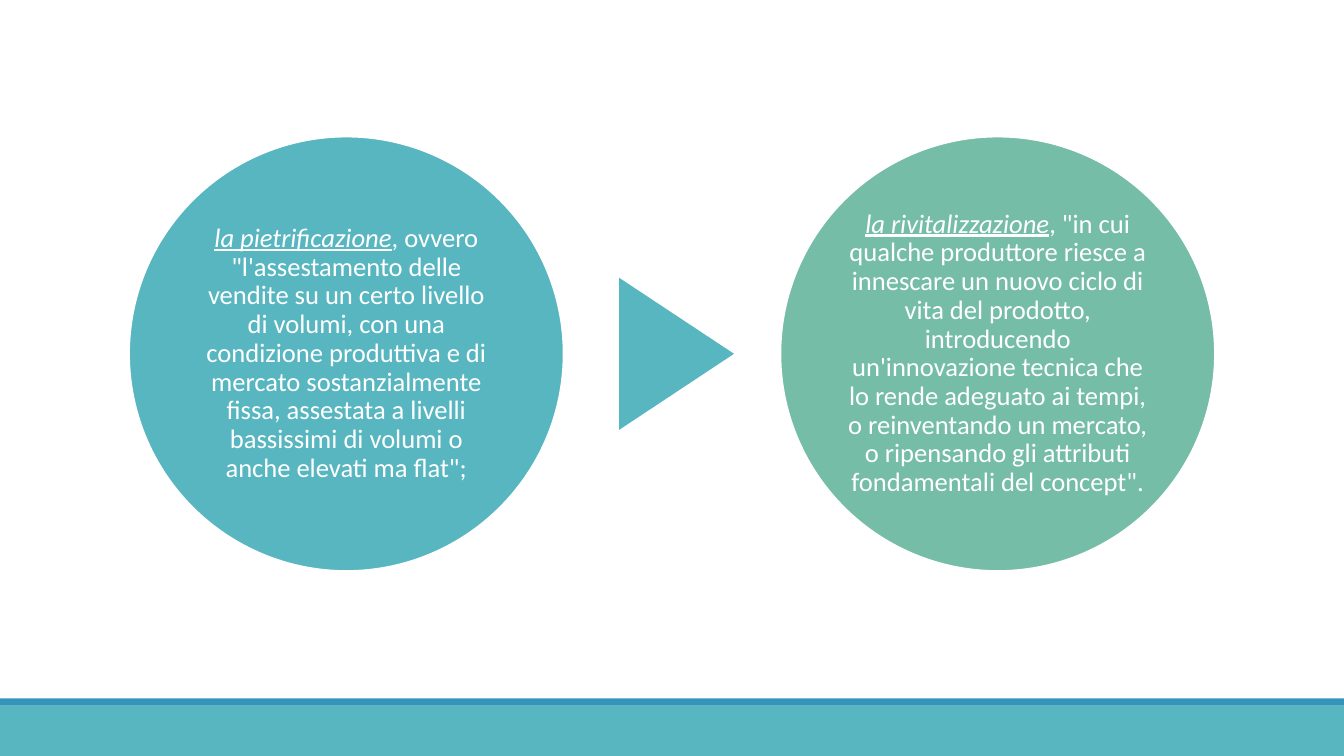
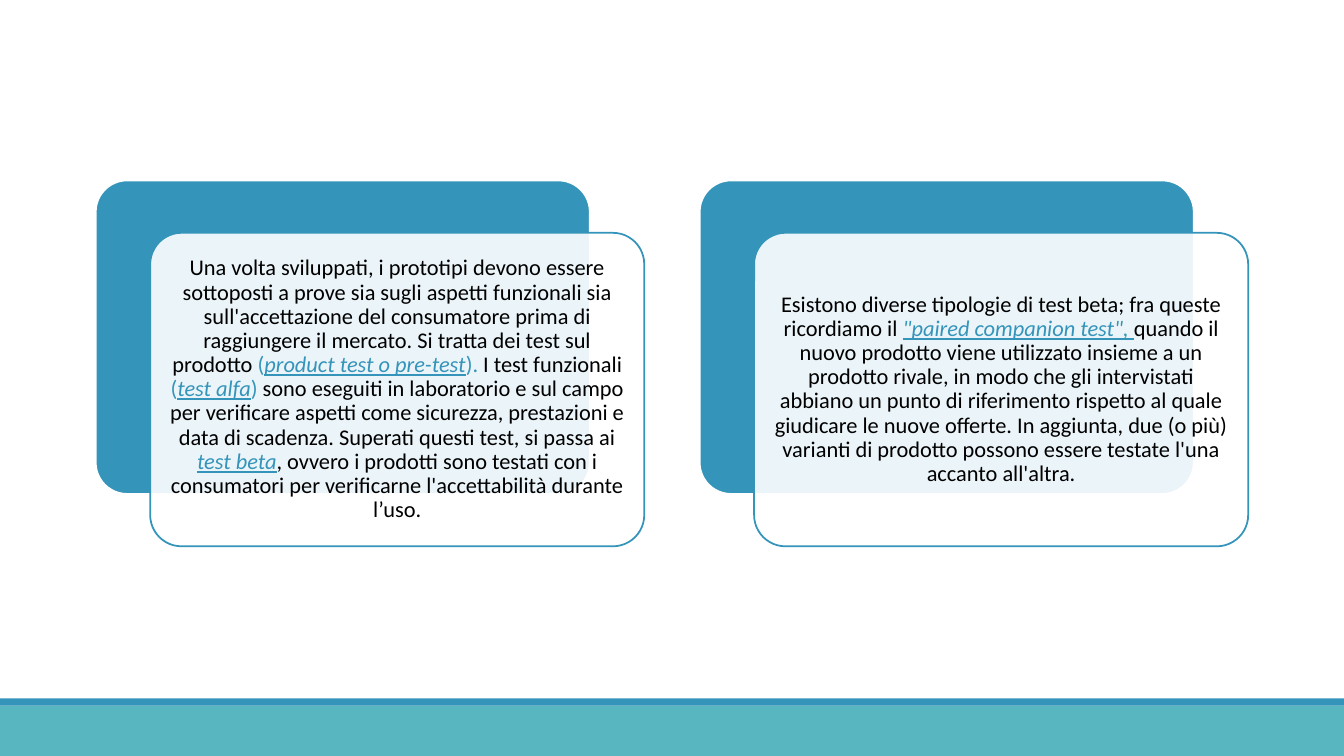
from dataclasses import dataclass

from lxml import etree
from pptx import Presentation
from pptx import util as u
from pptx.dml.color import RGBColor
from pptx.enum import shapes, text
from pptx.oxml import ns


@dataclass(frozen=True)
class Theme:
    teal: str = "58B6C0"
    blue: str = "3494BA"
    green: str = "75BDA7"
    white: str = "FFFFFF"
    black: str = "000000"
    font: str = "Calibri"
    circle_size: float = 19
    card_size: float = 16
    outline: float = 1.25


THEME = Theme()
WIDTH, HEIGHT = 13.33, 7.5
BLANK_LAYOUT = 6
CONTENT_MIDDLE = 3.51

CIRCLE = 4.31
CIRCLE_MARGIN = 1.28
ARROW_CENTER = 6.71
ARROW_BASE, ARROW_DEPTH = 1.51, 1.14

CARD_WIDTH, CARD_HEIGHT = 4.9, 3.11
CARD_LEFT, CARD_TOP, CARD_STEP = 0.95, 1.79, 5.99
CARD_SHIFT_X, CARD_SHIFT_Y = 0.54, 0.52

PLAIN = {"color": THEME.white}
TERM = {"color": THEME.white, "italic": True, "underline": True}
BODY = {"color": THEME.black}
ACCENT = {"color": THEME.blue}
KEYWORD = {"color": THEME.blue, "italic": True, "underline": True}

CIRCLES = [
    (THEME.teal, [
        ("la pietrificazione", TERM),
        (", ovvero \"l'assestamento delle vendite su un certo livello di volumi, "
         "con una condizione produttiva e di mercato sostanzialmente fissa, "
         "assestata a livelli bassissimi di volumi o anche elevati ma flat\";", PLAIN),
    ]),
    (THEME.green, [
        ("la rivitalizzazione", TERM),
        (", \"in cui qualche produttore riesce a innescare un nuovo ciclo di vita "
         "del prodotto, introducendo un'innovazione tecnica che lo rende adeguato "
         "ai tempi, o reinventando un mercato, o ripensando gli attributi "
         "fondamentali del concept\".", PLAIN),
    ]),
]

CARDS = [
    [
        ("Una volta sviluppati, i prototipi devono essere sottoposti a prove sia "
         "sugli aspetti funzionali sia sull'accettazione del consumatore prima di "
         "raggiungere il mercato. Si tratta dei test sul prodotto ", BODY),
        ("(", ACCENT),
        ("product test o pre-test", KEYWORD),
        (").", ACCENT),
        (" I test funzionali ", BODY),
        ("(", ACCENT),
        ("test alfa", KEYWORD),
        (") ", ACCENT),
        ("sono eseguiti in laboratorio e sul campo per verificare aspetti come "
         "sicurezza, prestazioni e data di scadenza. Superati questi test, si "
         "passa ai ", BODY),
        ("test beta", KEYWORD),
        (", ovvero i prodotti sono testati con i consumatori per verificarne "
         "l'accettabilità durante l’uso.", BODY),
    ],
    [
        ("Esistono diverse tipologie di test beta; fra queste ricordiamo il ", BODY),
        ("\"paired companion test\", ", KEYWORD),
        ("quando il nuovo prodotto viene utilizzato insieme a un prodotto rivale, "
         "in modo che gli intervistati abbiano un punto di riferimento rispetto al "
         "quale giudicare le nuove offerte. In aggiunta, due (o più) varianti di "
         "prodotto possono essere testate l'una accanto all'altra.", BODY),
    ],
]


def add_shape(slide, kind, box, fill, line=None):
    shape = slide.shapes.add_shape(kind, *(u.Inches(length) for length in box))
    shape.shadow.inherit = False
    shape.fill.solid()
    shape.fill.fore_color.rgb = RGBColor.from_string(fill)
    if line:
        shape.line.color.rgb = RGBColor.from_string(line)
        shape.line.width = u.Pt(THEME.outline)
    else:
        shape.line.fill.background()
    return shape


def set_opacity(shape, percent):
    color = shape.element.spPr.find(ns.qn("a:solidFill")).find(ns.qn("a:srgbClr"))
    etree.SubElement(color, ns.qn("a:alpha")).set("val", str(percent * 1000))


def write_text(shape, runs, size, inset):
    frame = shape.text_frame
    margin = u.Inches(inset)
    frame_format = {
        "word_wrap": True,
        "vertical_anchor": text.MSO_ANCHOR.MIDDLE,
        "margin_left": margin,
        "margin_right": margin,
        "margin_top": margin,
        "margin_bottom": margin,
    }
    for name, value in frame_format.items():
        setattr(frame, name, value)
    paragraph = frame.paragraphs[0]
    paragraph.alignment = text.PP_ALIGN.CENTER
    paragraph.line_spacing = 0.9
    for words, style in runs:
        run = paragraph.add_run()
        run.text = words
        font_format = {
            "name": THEME.font,
            "size": u.Pt(size),
            "italic": style.get("italic", False),
            "underline": style.get("underline", False),
        }
        for name, value in font_format.items():
            setattr(run.font, name, value)
        run.font.color.rgb = RGBColor.from_string(style["color"])


def add_layout_bands(layout, slide):
    bands = [(7, 0.5, THEME.teal), (6.93, 0.07, THEME.blue)]
    for number, (top, height, fill) in enumerate(bands):
        band = add_shape(slide, shapes.MSO_SHAPE.RECTANGLE,
                         (0, top, WIDTH, height), fill)
        band.element.nvSpPr.cNvPr.set("id", str(100 + number))
        layout.shapes.element.append(band.element)


def add_circle(slide, left, fill, runs):
    box = (left, CONTENT_MIDDLE - CIRCLE / 2, CIRCLE, CIRCLE)
    circle = add_shape(slide, shapes.MSO_SHAPE.OVAL, box, fill, THEME.white)
    write_text(circle, runs, THEME.circle_size, 0.03)


def add_arrow(slide):
    box = (ARROW_CENTER - ARROW_BASE / 2, CONTENT_MIDDLE - ARROW_DEPTH / 2,
           ARROW_BASE, ARROW_DEPTH)
    arrow = add_shape(slide, shapes.MSO_SHAPE.ISOSCELES_TRIANGLE, box, THEME.teal)
    arrow.rotation = 90


def add_panel(slide, left, top, fill, line):
    panel = add_shape(slide, shapes.MSO_SHAPE.ROUNDED_RECTANGLE,
                      (left, top, CARD_WIDTH, CARD_HEIGHT), fill, line)
    panel.adjustments[0] = 0.1
    return panel


def add_card(slide, left, runs):
    add_panel(slide, left, CARD_TOP, THEME.blue, THEME.white)
    front = add_panel(slide, left + CARD_SHIFT_X, CARD_TOP + CARD_SHIFT_Y,
                      THEME.white, THEME.blue)
    set_opacity(front, 90)
    write_text(front, runs, THEME.card_size, 0.07)


def main():
    presentation = Presentation()
    presentation.slide_width = u.Inches(WIDTH)
    presentation.slide_height = u.Inches(HEIGHT)
    layout = presentation.slide_layouts[BLANK_LAYOUT]

    evolution = presentation.slides.add_slide(layout)
    add_layout_bands(layout, evolution)
    circle_lefts = (CIRCLE_MARGIN, WIDTH - CIRCLE_MARGIN - CIRCLE)
    for left, (fill, runs) in zip(circle_lefts, CIRCLES):
        add_circle(evolution, left, fill, runs)
    add_arrow(evolution)

    testing = presentation.slides.add_slide(layout)
    for column, runs in enumerate(CARDS):
        add_card(testing, CARD_LEFT + column * CARD_STEP, runs)

    presentation.save("out.pptx")


if __name__ == "__main__":
    main()
